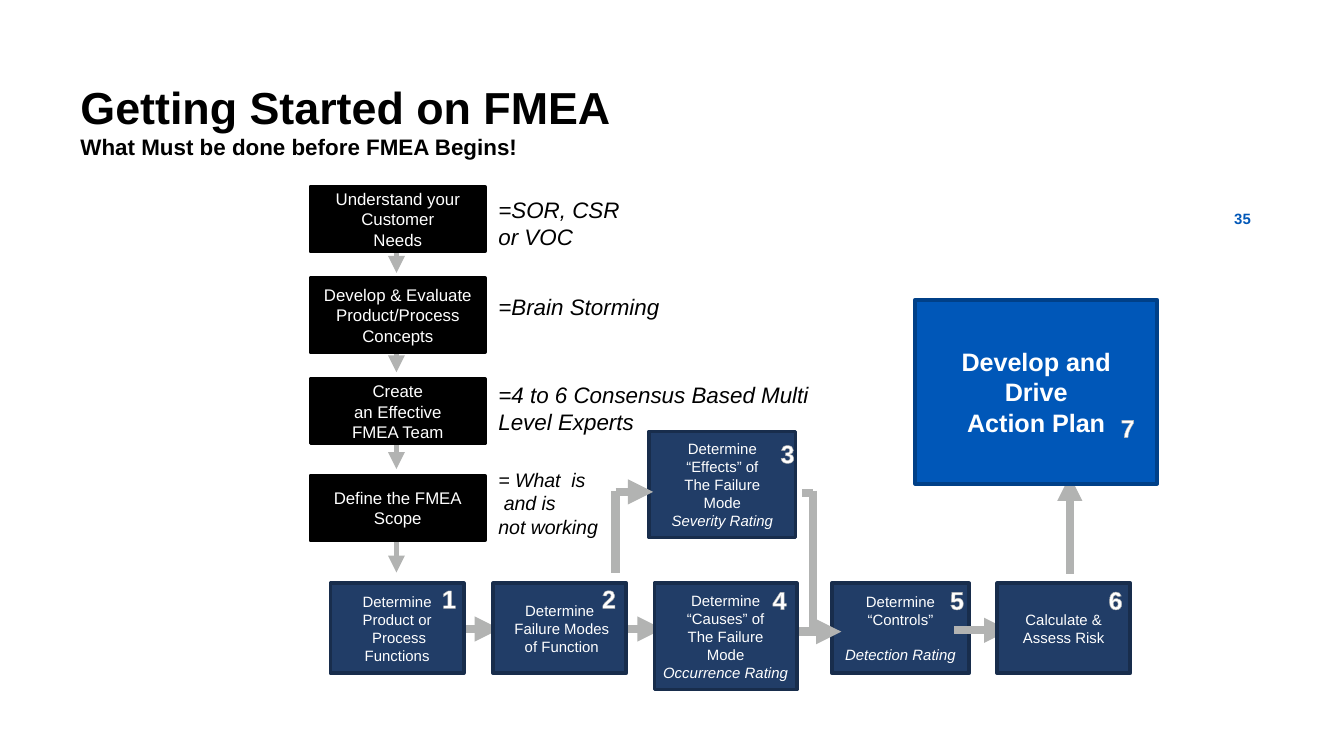
from lxml import etree
from pptx import Presentation
from pptx import util as u
from pptx.dml.color import RGBColor
from pptx.enum import shapes, text
from pptx.oxml import parse_xml
from pptx.oxml.ns import nsdecls, qn

BLACK = RGBColor(0x00, 0x00, 0x00)
WHITE = RGBColor(0xFF, 0xFF, 0xFF)
NAVY = RGBColor(0x21, 0x3D, 0x67)
NAVY_EDGE = RGBColor(0x18, 0x2D, 0x4C)
BLUE = RGBColor(0x00, 0x57, 0xB8)
BLUE_EDGE = RGBColor(0x00, 0x40, 0x88)
GREY = RGBColor(0xB2, 0xB3, 0xB2)

WIDTH = 10
HEIGHT = WIDTH * 9 / 16
PREP_LEFT, PREP_WIDTH = 2.31, 1.3
PREP_AXIS = 2.95
STEP_TOP, STEP_HEIGHT = 4.34, 0.67
STEP_AXIS = 4.68
RISE_X, RISE_Y, DROP_X = 4.58, 3.66, 6.05

# Preparation: lines, top, height, end of the arrow below
PREPARATION = [
    (["Understand your", "Customer", "Needs"], 1.39, 0.48, 2.03),
    (["Develop & Evaluate", "Product/Process", "Concepts"], 2.07, 0.55, 2.77),
    (["Create", "an Effective", "FMEA Team"], 2.82, 0.48, 3.49),
    (["Define the FMEA", "Scope"], 3.54, 0.48, 4.26),
]
# Remarks: lines, top, width, height, size
REMARKS = [
    (["=SOR, CSR or VOC"], 1.41, 1.22, 0.5, 12),
    (["=Brain Storming"], 2.13, 1.64, 0.3, 12),
    (["=4 to 6 Consensus Based Multi", "Level Experts"], 2.79, 3.42, 0.5, 12),
    (["= What  is", " and is", "not working"], 3.43, 1.05, 0.63, 10.5),
]
# Steps: lines, rating, left, top, width, height
STEPS_BEHIND = [
    (["Determine", "“Controls”"], "Detection Rating",
     6.19, STEP_TOP, 1.02, STEP_HEIGHT),
    (["Determine", "“Effects” of", "The Failure", "Mode"], "Severity Rating",
     4.83, 3.21, 1.09, 0.79),
]
STEPS_FRONT = [
    (["Determine", "“Causes” of", "The Failure", "Mode"], "Occurrence Rating",
     4.87, STEP_TOP, 1.06, 0.79),
    (["Determine", "Product or", " Process", "Functions"], None,
     2.46, STEP_TOP, 0.99, STEP_HEIGHT),
    (["Determine", " Failure Modes", " of Function"], None,
     3.67, STEP_TOP, 0.99, STEP_HEIGHT),
    (["Calculate &", "Assess Risk"], None,
     7.42, STEP_TOP, 0.99, STEP_HEIGHT),
]
ACTION = ["Develop and", "Drive", "Action Plan"]
# Step numbers: left, top
NUMBERS = [(3.19, 4.29), (4.38, 4.29), (5.71, 3.21), (5.65, 4.3),
           (6.97, 4.3), (8.15, 4.3), (8.24, 3.02)]
# Flow lines: start, end, has arrowhead
FLOW = [((x, y), (x + 0.41, y), True)
        for x, y in ((3.31, STEP_AXIS), (4.52, STEP_AXIS), (5.85, 4.7), (7.1, 4.69))] + [
    ((DROP_X, 3.65), (DROP_X, 4.7), False),
    ((RISE_X, RISE_Y), (4.86, RISE_Y), True),
    ((RISE_X, 4.26), (RISE_X, 3.65), False),
    ((5.97, 3.67), (DROP_X, 3.67), False),
    ((7.96, 4.27), (7.96, 3.54), True),
]

deck = Presentation()
deck.slide_width, deck.slide_height = u.Inches(WIDTH), u.Inches(HEIGHT)
page = deck.slides.add_slide(deck.slide_layouts[6])


def write(box, lines, size, color, bold=False, italic=False, align=None):
    for i, line in enumerate(lines):
        para = box.text_frame.paragraphs[0] if i == 0 else box.text_frame.add_paragraph()
        para.text = line
        para.alignment = align
        font = para.font
        font.name, font.size, font.color.rgb = "Arial", u.Pt(size), color
        font.bold, font.italic = bold, italic


def add_text(lines, left, top, width, height, size, color, wrap=True, **style):
    box = page.shapes.add_textbox(*map(u.Inches, (left, top, width, height)))
    box.text_frame.word_wrap = wrap
    write(box, lines, size, color, **style)
    return box


def add_box(lines, left, top, width, height, fill, edge, size, bold=False):
    box = page.shapes.add_shape(shapes.MSO_SHAPE.RECTANGLE,
                                *map(u.Inches, (left, top, width, height)))
    box.shadow.inherit = False
    box.fill.solid()
    box.fill.fore_color.rgb = fill
    box.line.color.rgb, box.line.width = edge, u.Pt(2)
    box.text_frame.word_wrap = False
    box.text_frame.vertical_anchor = text.MSO_ANCHOR.MIDDLE
    write(box, lines, size, WHITE, bold, align=text.PP_ALIGN.CENTER)
    return box


def add_step(lines, rating, *place):
    box = add_box(lines + [rating] * bool(rating), *place, NAVY, NAVY_EDGE, 8)
    if rating:
        last = box.text_frame.paragraphs[-1]
        last.font.italic = True
        if len(lines) == 2:
            last.space_before = u.Pt(9.2)


def add_line(start, end, head, width=4.5):
    line = page.shapes.add_connector(shapes.MSO_CONNECTOR.STRAIGHT,
                                     *map(u.Inches, start + end))
    line.line.color.rgb, line.line.width = GREY, u.Pt(width)
    if head:
        etree.SubElement(line.line._get_or_add_ln(), qn("a:tailEnd"), type="triangle")
    etree.SubElement(line._element.spPr, qn("a:effectLst"))


# Heading
heading = add_text(["Getting Started on FMEA", "What Must be done before FMEA Begins!"],
                   0.5, 0.5, 8.35, 0.78, 24, BLACK, bold=True)
heading.text_frame.vertical_anchor = text.MSO_ANCHOR.MIDDLE
heading.text_frame.paragraphs[1].font.size = u.Pt(12)

# Steps and the arrows between them
for step in STEPS_BEHIND:
    add_step(*step)
for link in FLOW:
    add_line(*link)
for step in STEPS_FRONT:
    add_step(*step)

# Preparation column: arrows first, so the boxes cover their starts
for _, _, _, end in PREPARATION:
    add_line((PREP_AXIS, end - 0.28), (PREP_AXIS, end), True, 3)
for lines, top, height, _ in PREPARATION:
    add_box(lines, PREP_LEFT, top, PREP_WIDTH, height, BLACK, BLACK, 9)
for lines, top, width, height, size in REMARKS:
    add_text(lines, PREP_LEFT + PREP_WIDTH, top, width, height, size, BLACK, italic=True)

# Action plan
add_box(ACTION, 6.81, 2.23, 1.8, 1.37, BLUE, BLUE_EDGE, 13.5, bold=True)

# Step numbers with a thin grey outline
for number, (left, top) in enumerate(NUMBERS, 1):
    box = add_text([str(number)], left, top, 0.31, 0.33, 13.5, WHITE,
                   wrap=False, bold=True)
    span = box.text_frame.paragraphs[0].runs[0]
    span.font._element.insert(0, parse_xml(
        f'<a:ln {nsdecls("a")} w="{u.Pt(0.8)}"><a:solidFill>'
        f'<a:srgbClr val="{GREY}"/></a:solidFill></a:ln>'))

# Page number
folio = add_text(["35"], 8.99, 1.56, 0.51, 0.13, 8, BLUE, bold=True,
                 align=text.PP_ALIGN.CENTER)
folio.text_frame.vertical_anchor = text.MSO_ANCHOR.MIDDLE

deck.save("out.pptx")
